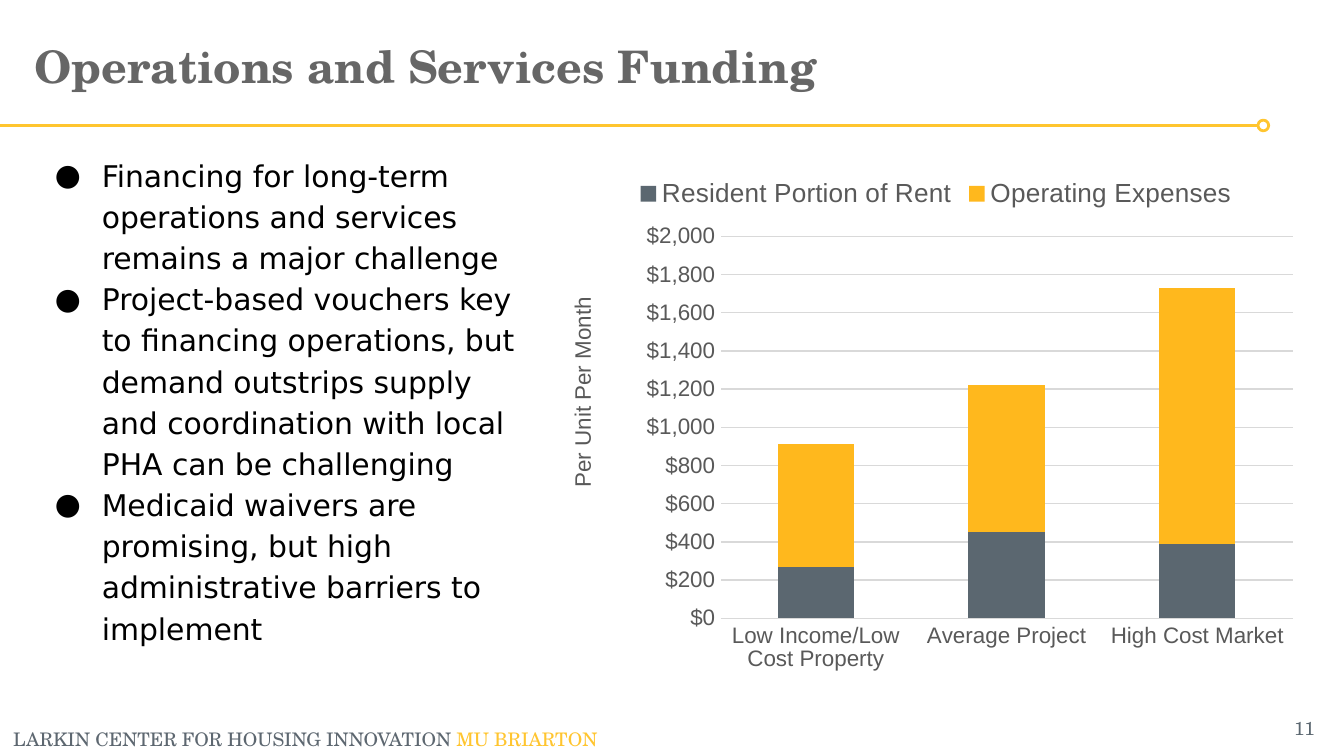
from lxml import etree
from pptx import Presentation
from pptx import util as u
from pptx.chart import data as chart_data
from pptx.dml.color import RGBColor
from pptx.enum import chart as ch, shapes, text
from pptx.oxml import parse_xml
from pptx.oxml.ns import nsdecls, qn

SERIF, SANS, CHART_FONT = "TeX Gyre Schola", "DejaVu Sans", "Arial"
SLATE, GOLD, GRAY, GRID = "5B6770", "FFC52F", "595959", "D9D9D9"

presentation = Presentation()
presentation.slide_width = u.Inches(10)
presentation.slide_height = presentation.slide_width * 9 // 16
column = presentation.slide_width / 100
row = presentation.slide_height / 100
slide = presentation.slides.add_slide(presentation.slide_layouts[6])


def style(font, name, size, color, bold=False):
    font.name, font.size, font.bold = name, u.Pt(size), bold
    font.color.rgb = RGBColor.from_string(color)


def place_in_chart(element, index, **shares):
    """Give a plot area or title a fixed place, in shares of the chart."""
    for old in element.findall(qn("c:layout")):
        element.remove(old)
    layout = parse_xml(f"<c:layout {nsdecls('c')}><c:manualLayout/></c:layout>")
    if "w" in shares:
        etree.SubElement(layout[0], qn("c:layoutTarget")).set("val", "inner")
    for key in ("x", "y"):
        etree.SubElement(layout[0], qn(f"c:{key}Mode")).set("val", "edge")
    for key, share in shares.items():
        etree.SubElement(layout[0], qn(f"c:{key}")).set("val", str(share))
    element.insert(index, layout)


# Text: left, top, width, height in columns and rows, then margin, anchor, alignment,
# font, size, bold, and paragraphs made of (wording, colour) runs
top, middle = text.MSO_ANCHOR.TOP, text.MSO_ANCHOR.MIDDLE
left, right = text.PP_ALIGN.LEFT, text.PP_ALIGN.RIGHT
bullets = [
    "Financing for long-term operations and services remains a major challenge",
    "Project-based vouchers key to financing operations, but demand outstrips supply "
    "and coordination with local PHA can be challenging",
    "Medicaid waivers are promising, but high administrative barriers to implement",
]
boxes = [
    (78.9, 93.6, 19.9, 5.3, 0.05, middle, right, SERIF, 10, False, [[("11", SLATE)]]),
    (0, 95.4, 60.8, 3.6, 0.05, top, left, SERIF, 10, False,
     [[("LARKIN CENTER FOR HOUSING INNOVATION ", "5D6770"), ("MU BRIARTON", GOLD)]]),
    (1.6, 0, 99, 17.4, 0.1, middle, left, SERIF, 24, True,
     [[("Operations and Services Funding", "666666")]]),
    (1.6, 18.35, 38.6, 69.7, 0.1, top, left, SANS, 16, False,
     [[(bullet, "000000")] for bullet in bullets]),
]
for x, y, width, height, margin, anchor, align, name, size, bold, paragraphs in boxes:
    box = slide.shapes.add_textbox(
        int(x * column), int(y * row), int(width * column), int(height * row))
    frame = box.text_frame
    frame.word_wrap = True
    frame.vertical_anchor = anchor
    frame.margin_top = frame.margin_bottom = u.Inches(margin)
    for index, runs in enumerate(paragraphs):
        paragraph = frame.add_paragraph() if index else frame.paragraphs[0]
        paragraph.alignment = align
        for wording, color in runs:
            run = paragraph.add_run()
            run.text = wording
            style(run.font, name, size, color, bold)

# Bullets of the last box
for paragraph in frame.paragraphs:
    paragraph.line_spacing = 1.15
    properties = paragraph._p.get_or_add_pPr()
    properties.set("marL", str(u.Inches(0.5)))
    properties.set("indent", str(u.Inches(-0.35)))
    color = etree.SubElement(properties, qn("a:buClr"))
    etree.SubElement(color, qn("a:srgbClr")).set("val", "000000")
    etree.SubElement(properties, qn("a:buFont")).set("typeface", SANS)
    etree.SubElement(properties, qn("a:buChar")).set("char", "●")

# Rule under the title, ending in a ring
rule_y = int(16.6 * row)
ring_size = int(0.8 * column)
ring_left = int(93.6 * column)
rule = slide.shapes.add_connector(
    shapes.MSO_CONNECTOR.STRAIGHT, int(-0.1 * column), rule_y, ring_left, rule_y)
etree.SubElement(rule._element.spPr, qn("a:effectLst"))
ring = slide.shapes.add_shape(
    shapes.MSO_SHAPE.OVAL, ring_left, rule_y - ring_size // 2, ring_size, ring_size)
ring.shadow.inherit = False
ring.fill.background()
for shape, weight in ((rule, 2), (ring, 1.5)):
    shape.line.color.rgb = RGBColor.from_string(GOLD)
    shape.line.width = u.Pt(weight)

# Stacked column chart
costs = chart_data.CategoryChartData(number_format='"$"#,##0')
costs.categories = ["Low Income/Low Cost Property", "Average Project", "High Cost Market"]
costs.add_series("Resident Portion of Rent", (270, 450, 390))
costs.add_series("Operating Expenses", (640, 770, 1340))
chart = slide.shapes.add_chart(
    ch.XL_CHART_TYPE.COLUMN_STACKED, int(42 * column), int(21.7 * row),
    int(55.3 * column), int(68.3 * row), costs).chart
style(chart.font, CHART_FONT, 12, "000000")
chart.has_title = False
chart.has_legend = True
chart.legend.position = ch.XL_LEGEND_POSITION.TOP
chart.legend.include_in_layout = False
style(chart.legend.font, CHART_FONT, 14, GRAY)

plot = chart.plots[0]
plot.gap_width, plot.overlap, plot.vary_by_categories = 150, 100, False
for series, color in zip(plot.series, (SLATE, "FFB81D")):
    series.format.fill.solid()
    series.format.fill.fore_color.rgb = RGBColor.from_string(color)

categories, values = chart.category_axis, chart.value_axis
for axis in (categories, values):
    axis.major_tick_mark = axis.minor_tick_mark = ch.XL_TICK_MARK.NONE
    style(axis.tick_labels.font, CHART_FONT, 12, GRAY)
values.minimum_scale, values.maximum_scale, values.major_unit = 0, 2000, 200
values.tick_labels.number_format = '"$"#,##0'
values.tick_labels.number_format_is_linked = False
values.format.line.fill.background()
for line in (categories.format.line, values.major_gridlines.format.line):
    line.color.rgb = RGBColor.from_string(GRID)
    line.width = u.Pt(0.75)

title = values.axis_title
title.text_frame.text = "Per Unit Per Month"
style(title.text_frame.paragraphs[0].runs[0].font, CHART_FONT, 12, GRAY)
title.text_frame._txBody.bodyPr.set("rot", "-5400000")
title.text_frame._txBody.bodyPr.set("vert", "horz")
place_in_chart(title._element, 1, x=0, y=0.25)
place_in_chart(plot._element.getparent(), 0, x=0.21, y=0.14, w=0.77, h=0.74)

presentation.save("out.pptx")
